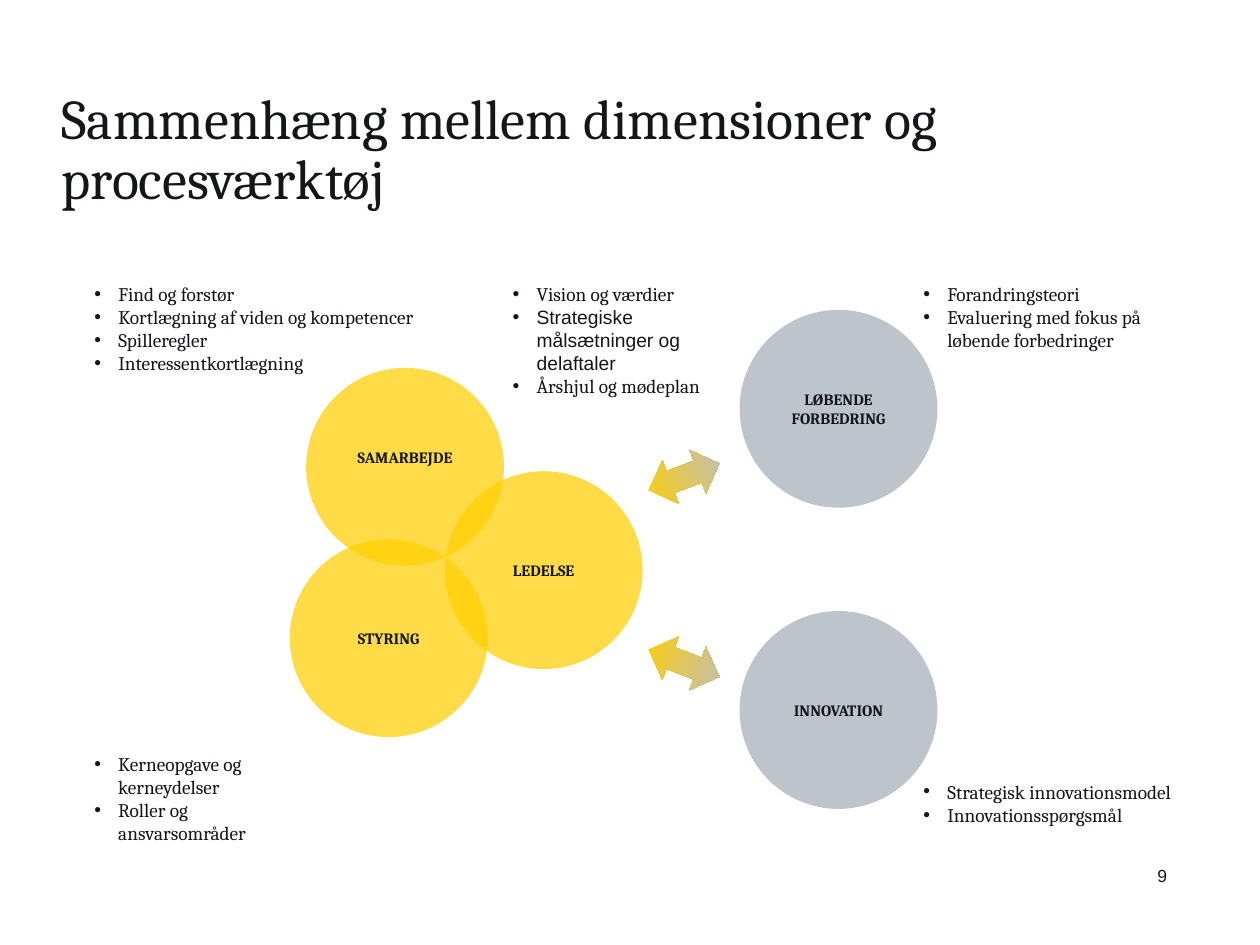
"""Build a slide on how dimensions relate to process tools."""
from lxml.etree import SubElement
from pptx import Presentation
from pptx.dml.color import RGBColor
from pptx.enum.shapes import MSO_SHAPE
from pptx.enum.text import MSO_ANCHOR, MSO_AUTO_SIZE, PP_ALIGN
from pptx.oxml.ns import qn
from pptx.util import Pt

PX = 9144
COLORS = {"text": "141619", "yellow": "FFCF00", "gray": "BEC4CB", "arrow_end": "BDBEC0"}


def add_text(tf, text, size=11, font="Cambria", bold=False, align=PP_ALIGN.LEFT,
             anchor=MSO_ANCHOR.TOP, spacing=None, bullet=False):
    tf.word_wrap = True
    tf.vertical_anchor = anchor
    p = tf.add_paragraph() if tf.text else tf.paragraphs[0]
    p.alignment = align
    if spacing:
        p.line_spacing = spacing
    if bullet:
        pPr = p._p.get_or_add_pPr()
        pPr.set("marL", str(19 * PX))
        pPr.set("indent", str(-19 * PX))
        SubElement(pPr, qn("a:buFont")).set("typeface", "Arial")
        SubElement(pPr, qn("a:buChar")).set("char", "•")
    r = p.add_run()
    r.text = text
    r.font.size = Pt(size)
    r.font.name = font
    r.font.bold = bold
    r.font.color.rgb = RGBColor.from_string(COLORS["text"])


def add_shape(s, kind, x, y, w, h):
    sp = s.shapes.add_shape(kind, x * PX, y * PX, w * PX, h * PX)
    sp.shadow.inherit = False
    sp.line.fill.background()
    return sp


prs = Presentation()
prs.slide_width = 1000 * PX
prs.slide_height = 750 * PX
s = prs.slides.add_slide(prs.slide_layouts[6])

tb = s.shapes.add_textbox(39 * PX, 28 * PX, 785 * PX, 145 * PX)
add_text(tb.text_frame, "Sammenhæng mellem dimensioner og procesværktøj",
         size=32, anchor=MSO_ANCHOR.BOTTOM, spacing=0.9)
tb = s.shapes.add_textbox(703 * PX, 675 * PX, 233 * PX, 40 * PX)
add_text(tb.text_frame, "9", size=10, font="Arial", align=PP_ALIGN.RIGHT,
         anchor=MSO_ANCHOR.MIDDLE)

circles = [
    ("SAMARBEJDE", 243, 292, "yellow", 20),
    ("LØBENDE FORBEDRING", 587, 246, "gray", 5),
    ("LEDELSE", 353, 374, "yellow", 5),
    ("STYRING", 230, 428, "yellow", 5),
    ("INNOVATION", 587, 485, "gray", 5),
]
for label, x, y, color, bottom in circles:
    sp = add_shape(s, MSO_SHAPE.OVAL, x, y, 157, 157)
    sp.fill.solid()
    sp.fill.fore_color.rgb = RGBColor.from_string(COLORS[color])
    if color == "yellow":
        clr = sp._element.spPr.find(qn("a:solidFill")).find(qn("a:srgbClr"))
        SubElement(clr, qn("a:alpha")).set("val", "72000")
    tf = sp.text_frame
    tf.margin_bottom = bottom * PX
    add_text(tf, label, size=9, bold=True, align=PP_ALIGN.CENTER, anchor=MSO_ANCHOR.MIDDLE)

for y, angle in [(360, 339.4), (508, 21)]:
    sp = add_shape(s, MSO_SHAPE.LEFT_RIGHT_ARROW, 513, y, 60, 37)
    sp.rotation = angle
    sp.fill.gradient()
    sp.fill.gradient_angle = 0
    for stop, position, color in zip(sp.fill.gradient_stops, (0, 1), ("yellow", "arrow_end")):
        stop.position = position
        stop.color.rgb = RGBColor.from_string(COLORS[color])

lists = [
    (65, 219, 288, 121, ["Find og forstør", "Kortlægning af viden og kompetencer",
                         "Spilleregler", "Interessentkortlægning"]),
    (397, 219, 171, 140, ["Vision og værdier", "Strategiske målsætninger og delaftaler",
                          "Årshjul og mødeplan"]),
    (65, 592, 180, 103, ["Kerneopgave og kerneydelser", "Roller og ansvarsområder"]),
    (723, 614, 220, 84, ["Strategisk innovationsmodel", "Innovationsspørgsmål"]),
    (723, 219, 236, 103, ["Forandringsteori", "Evaluering med fokus på løbende forbedringer"]),
]
for x, y, w, h, items in lists:
    tf = s.shapes.add_textbox(x * PX, y * PX, w * PX, h * PX).text_frame
    tf.auto_size = MSO_AUTO_SIZE.SHAPE_TO_FIT_TEXT
    for item in items:
        font = "Arial" if item.startswith("Strategiske ") else "Cambria"
        add_text(tf, item, font=font, bullet=True)

prs.save("out.pptx")
